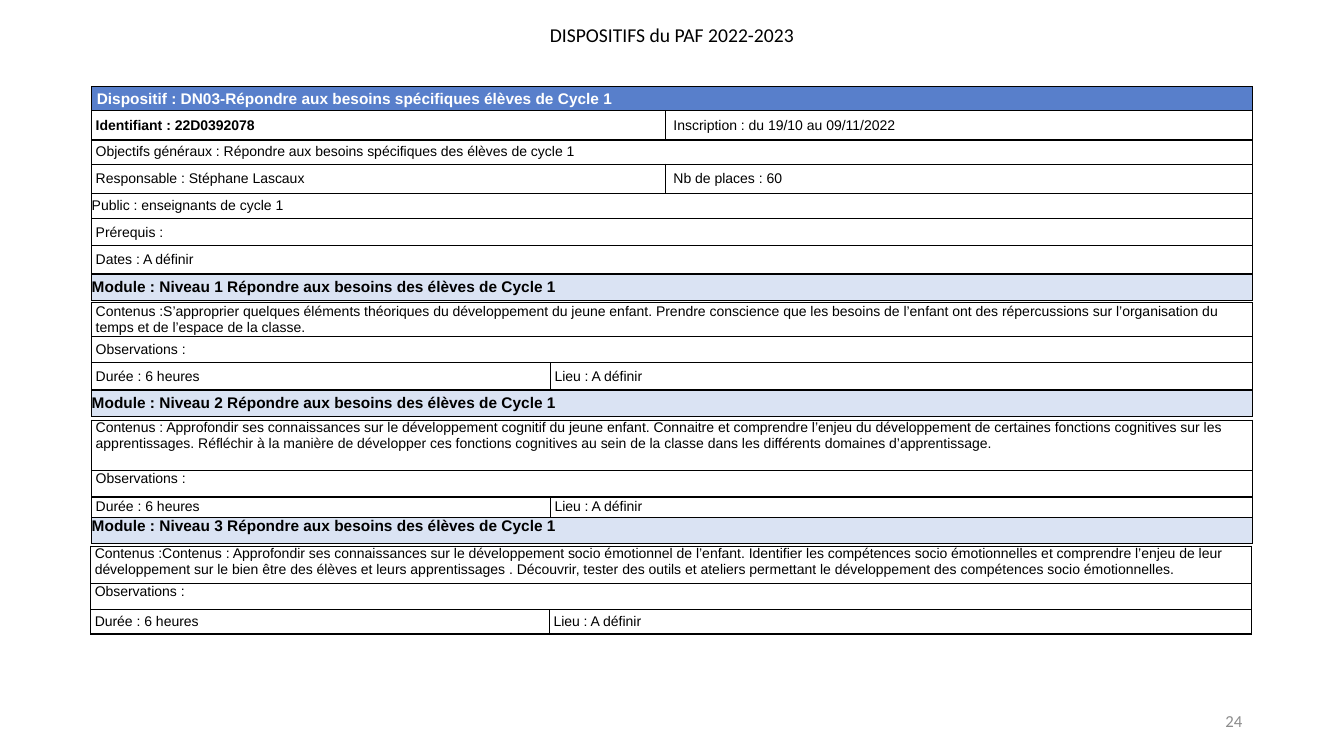
from lxml.etree import SubElement
from pptx import Presentation
from pptx.dml.color import RGBColor
from pptx.enum.text import MSO_ANCHOR, PP_ALIGN
from pptx.oxml.ns import qn
from pptx.util import Inches, Pt

BLACK = RGBColor(0x00, 0x00, 0x00)
WHITE = RGBColor(0xFF, 0xFF, 0xFF)
GRAY = RGBColor(0x8C, 0x8C, 0x8C)
BLUE = RGBColor(0x58, 0x7F, 0xCB)
PALE_BLUE = RGBColor(0xDA, 0xE3, 0xF3)
TOP, MIDDLE = MSO_ANCHOR.TOP, MSO_ANCHOR.MIDDLE
TABLE_WIDTH = 11.51

# Row styles: fill, text colour, size, bold, left margin
STYLES = {
    "heading": (BLUE, WHITE, 11, True, 0.05),
    "module": (PALE_BLUE, BLACK, 11, True, 0),
    "strong": (WHITE, BLACK, 10, True, 0.04),
    "plain": (WHITE, BLACK, 10, False, 0.04),
    "flush": (WHITE, BLACK, 10, False, 0),
    "second": (WHITE, BLACK, 10, False, 0.08),
}


def draw_borders(cell):
    properties = cell._tc.get_or_add_tcPr()
    for side in ("a:lnL", "a:lnR", "a:lnT", "a:lnB"):
        line = SubElement(properties, qn(side), w=str(Pt(1)))
        fill = SubElement(line, qn("a:solidFill"))
        SubElement(fill, qn("a:srgbClr"), val=str(BLACK))


def write_cell(cell, text, style, space_before, anchor):
    fill, color, size, bold, margin = STYLES[style]
    cell.fill.solid()
    cell.fill.fore_color.rgb = fill
    cell.margin_left = Inches(margin)
    cell.margin_right = cell.margin_top = cell.margin_bottom = 0
    cell.vertical_anchor = anchor
    paragraph = cell.text_frame.paragraphs[0]
    paragraph.text = text
    paragraph.space_before = Pt(space_before)
    paragraph.font.name = "Arial"
    paragraph.font.size = Pt(size)
    paragraph.font.bold = bold
    paragraph.font.color.rgb = color


presentation = Presentation()
presentation.slide_width = Inches(13.33)
presentation.slide_height = Inches(7.5)
slide = presentation.slides.add_slide(presentation.slide_layouts[5])

# Title
title = slide.shapes.title
title.left, title.top = Inches(5.31), Inches(0.18)
title.width, title.height = Inches(2.71), Inches(0.34)
title.text_frame.word_wrap = False
title.text_frame.vertical_anchor = TOP
paragraph = title.text_frame.paragraphs[0]
paragraph.text = "DISPOSITIFS du PAF 2022-2023"
paragraph.alignment = PP_ALIGN.CENTER
paragraph.font.name = "Calibri"
paragraph.font.size = Pt(14)
paragraph.font.color.rgb = BLACK

# Rows: height, style, space before, anchor, texts
observations = "Observations :"
duration = ["Durée : 6 heures", "Lieu : A définir"]
module = "Module : Niveau {} Répondre aux besoins des élèves de Cycle 1"
overview_rows = [
    (0.24, "heading", 0.9, MIDDLE,
     ["Dispositif : DN03-Répondre aux besoins spécifiques élèves de Cycle 1"]),
    (0.29, "strong", 2.6, MIDDLE,
     ["Identifiant : 22D0392078", "Inscription : du 19/10 au 09/11/2022"]),
    (0.24, "plain", 0.5, MIDDLE,
     ["Objectifs généraux : Répondre aux besoins spécifiques des élèves de cycle 1"]),
    (0.29, "plain", 2.2, MIDDLE,
     ["Responsable : Stéphane Lascaux", "Nb de places : 60"]),
    (0.25, "flush", 0.5, MIDDLE, ["Public : enseignants de cycle 1"]),
    (0.27, "plain", 1.4, MIDDLE, ["Prérequis :"]),
    (0.28, "plain", 1.8, MIDDLE, ["Dates : A définir"]),
    (0.26, "module", 2.2, MIDDLE, [module.format(1)]),
]
level_1_rows = [
    (0.34, "plain", 0.7, MIDDLE,
     ["Contenus :S’approprier quelques éléments théoriques du développement du jeune "
      "enfant. Prendre conscience que les besoins de l’enfant ont des répercussions sur "
      "l’organisation du temps et de l’espace de la classe."]),
    (0.26, "plain", 1.4, MIDDLE, [observations]),
    (0.27, "plain", 1.4, MIDDLE, duration),
    (0.26, "module", 1.9, MIDDLE, [module.format(2)]),
]
level_2_rows = [
    (0.5, "plain", 0.7, TOP,
     ["Contenus : Approfondir ses connaissances sur le développement cognitif du jeune "
      "enfant. Connaitre et comprendre l’enjeu du développement de certaines fonctions "
      "cognitives sur les apprentissages. Réfléchir à la manière de développer ces "
      "fonctions cognitives au sein de la classe dans les différents domaines "
      "d’apprentissage."]),
    (0.26, "plain", 1.4, TOP, [observations]),
    (0.2, "plain", 1.4, MIDDLE, duration),
    (0.26, "module", 1.9, TOP, [module.format(3)]),
]
level_3_rows = [
    (0.37, "plain", 0.7, TOP,
     ["Contenus :Contenus : Approfondir ses connaissances sur le développement socio "
      "émotionnel de l’enfant. Identifier les compétences socio émotionnelles et "
      "comprendre l’enjeu de leur développement sur le bien être des élèves et leurs "
      "apprentissages . Découvrir, tester des outils et ateliers permettant le "
      "développement des compétences socio émotionnelles."]),
    (0.26, "plain", 1.4, TOP, [observations]),
    (0.24, "plain", 1.4, MIDDLE, duration),
]

# Tables: left, top, first column width, style of the second column, rows
tables = [
    (0.91, 0.86, 5.69, "second", overview_rows),
    (0.91, 3.0, 4.55, "plain", level_1_rows),
    (0.91, 4.17, 4.55, "plain", level_2_rows),
    (0.9, 5.42, 4.55, "plain", level_3_rows),
]
for left, top, first_width, second_style, rows in tables:
    height = sum(row[0] for row in rows)
    table = slide.shapes.add_table(len(rows), 2, Inches(left), Inches(top),
                                   Inches(TABLE_WIDTH), Inches(height)).table
    table.first_row = table.horz_banding = False
    table.columns[0].width = Inches(first_width)
    table.columns[1].width = Inches(TABLE_WIDTH - first_width)
    for index, (row_height, style, space_before, anchor, texts) in enumerate(rows):
        table.rows[index].height = Inches(row_height)
        first, second = table.cell(index, 0), table.cell(index, 1)
        draw_borders(first)
        draw_borders(second)
        write_cell(first, texts[0], style, space_before, anchor)
        if len(texts) == 2:
            # The overview's second column has no space before
            space = 0 if second_style == "second" else space_before
            write_cell(second, texts[1], second_style, space, anchor)
        else:
            first.merge(second)

# Slide number
number = slide.shapes.add_textbox(Inches(9.42), Inches(6.95), Inches(3), Inches(0.4))
number.text_frame.word_wrap = True
number.text_frame.vertical_anchor = MIDDLE
paragraph = number.text_frame.paragraphs[0]
paragraph.text = "24"
paragraph.alignment = PP_ALIGN.RIGHT
paragraph.font.name = "Calibri"
paragraph.font.size = Pt(12)
paragraph.font.color.rgb = GRAY

presentation.save("out.pptx")
